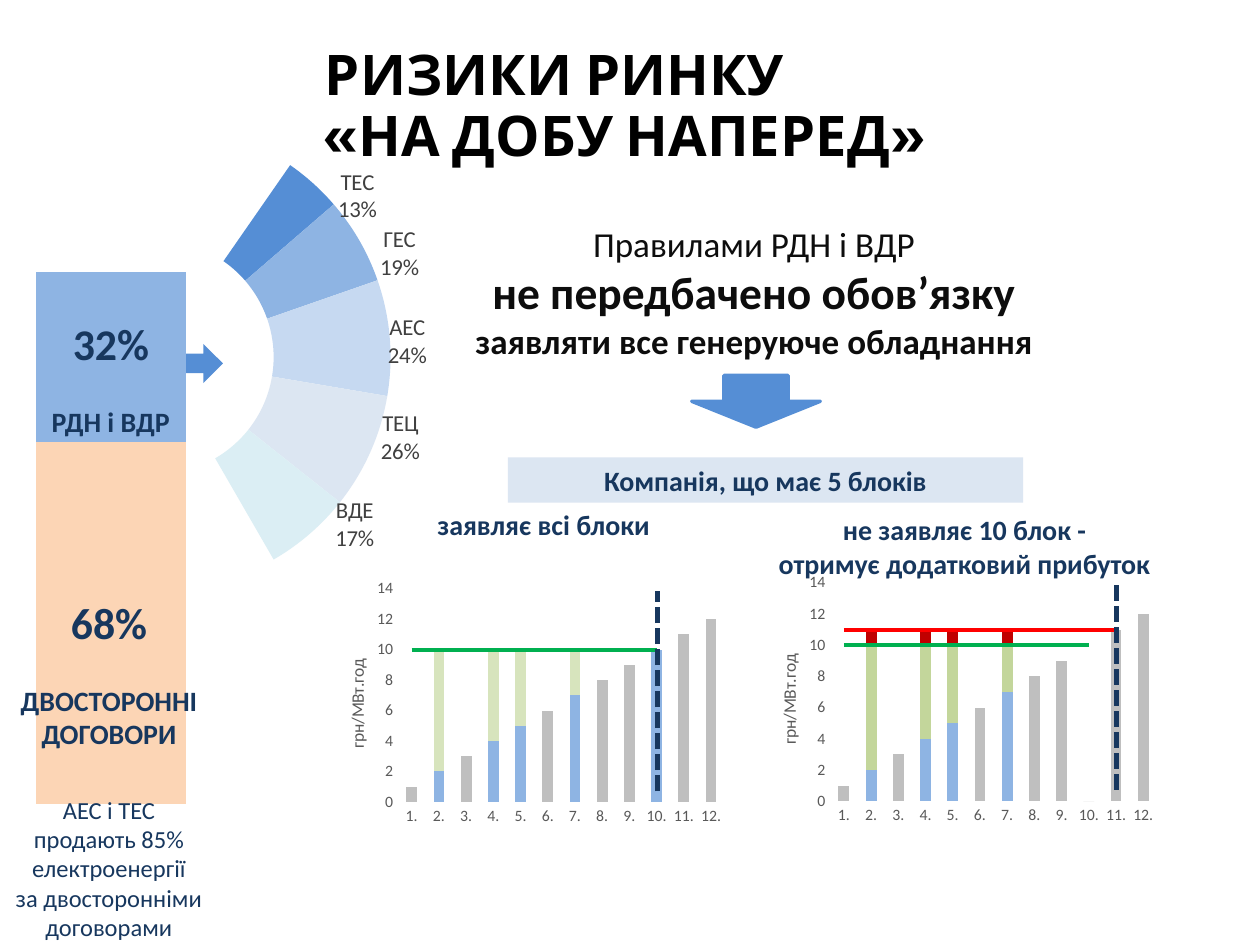
from lxml.etree import SubElement
from pptx import Presentation
from pptx.chart.data import CategoryChartData
from pptx.dml.color import RGBColor
from pptx.enum.chart import XL_CHART_TYPE, XL_MARKER_STYLE, XL_TICK_MARK
from pptx.enum.dml import MSO_LINE
from pptx.enum.shapes import MSO_CONNECTOR, MSO_SHAPE
from pptx.enum.text import MSO_ANCHOR, PP_ALIGN
from pptx.oxml import parse_xml
from pptx.oxml.ns import nsdecls, qn
from pptx.util import Inches, Pt

NAVY, BLUE, SKY, GRAY = "17375E", "558ED5", "8EB4E3", "BFBFBF"
GREEN, RED = "00B050", "FF0000"

# Market share: name, value, colour, label, label shift (fraction of chart)
SOURCES = [
    ("Ринок двосторонніх договорів", 68, None, None, None),
    ("ТЕС", 4, BLUE, "ТЕС\n13%", (0.11, -0.06)),
    ("ГЕС", 6, SKY, "ГЕС\n19%", (0.12, -0.03)),
    ("АЕС", 8, "C6D9F1", "АЕС\n24%", (0.1, 0)),
    ("ТЕЦ", 8, "DCE6F2", "ТЕЦ\n26%", (0.11, 0.02)),
    ("ВДЕ", 6, "DBEEF4", "ВДЕ\n17%", (0.11, 0.07)),
]
MARKET_SPLIT = [("Series 1", [100], "FCD5B5"), ("Series 2", [47], SKY)]

# Bids of the generating units; three empty slots follow the twelve units
SLOTS = [f"{n}." for n in range(1, 13)] + [""] * 3
PROFIT = [None, 8, None, 6, 5, None, 3]
EXTRA = [None, 1, None, 1, 1, None, 1]
BIDS = [
    dict(box=(5.91, 4.5, 4, 2.09), company=[1, 3, 4, 6],
         bars=[([1, 2, 3, 4, 5, 6, 7, 8, 9, 0, 11, 12], GRAY),
               (PROFIT, "C3D69B"), (EXTRA, "C00000")],
         lines=[([10] * 10, GREEN), ([11] * 11, RED)],
         cutoff=(8.86, 6.27, 4.63)),
    dict(box=(2.48, 4.55, 4, 2.04), company=[1, 3, 4, 6, 9],
         bars=[(list(range(1, 13)), GRAY), (PROFIT, "D7E4BD")],
         lines=[([10] * 10, GREEN)],
         cutoff=(5.22, 6.28, 4.69)),
]

prs = Presentation()
prs.slide_width, prs.slide_height = Inches(10), Inches(7.5)
slide = prs.slides.add_slide(prs.slide_layouts[6])


def rgb(value):
    return RGBColor.from_string(value)


def paint(part, color):
    part.format.fill.solid()
    part.format.fill.fore_color.rgb = rgb(color)


def set_font(font, size, color, bold=False, name="Calibri"):
    font.size, font.bold, font.name = Pt(size), bold, name
    font.color.rgb = rgb(color)


def write(frame, lines, color=NAVY, size=16, bold=True, name="Calibri",
          align=PP_ALIGN.CENTER, spacing=None):
    """Each line is a text, or a tuple of text and its own format."""
    frame.word_wrap = True
    frame.vertical_anchor = MSO_ANCHOR.MIDDLE
    for i, line in enumerate(lines):
        text, own = (line, {}) if isinstance(line, str) else line
        p = frame.paragraphs[0] if i == 0 else frame.add_paragraph()
        p.alignment = align
        if spacing:
            p.line_spacing = spacing
        if "before" in own:
            p.space_before = Pt(own["before"])
        run = p.add_run()
        run.text = text
        set_font(run.font, own.get("size", size), color, own.get("bold", bold), name)


def add_text(box, lines, **fmt):
    write(slide.shapes.add_textbox(*map(Inches, box)).text_frame, lines, **fmt)


def add_block(preset, box, color):
    block = slide.shapes.add_shape(preset, *map(Inches, box))
    block.shadow.inherit = False
    block.fill.solid()
    block.fill.fore_color.rgb = rgb(color)
    block.line.fill.background()
    return block


def place(parent, index, edge=False, inner=False, **values):
    """Give a chart part a manual layout in fractions of the chart."""
    for old in parent.findall(qn("c:layout")):
        parent.remove(old)
    layout = parse_xml(f"<c:layout {nsdecls('c')}><c:manualLayout/></c:layout>")
    items = [("layoutTarget", "inner")] if inner else []
    items += [("xMode", "edge"), ("yMode", "edge")] if edge else []
    for tag, value in items + list(values.items()):
        SubElement(layout[0], qn(f"c:{tag}")).set("val", str(value))
    parent.insert(index, layout)


def add_chart(kind, box, categories, series, plot_box):
    data = CategoryChartData()
    data.categories = categories
    for name, values in series:
        data.add_series(name, values)
    chart = slide.shapes.add_chart(kind, *map(Inches, box), data).chart
    chart.has_legend = chart.has_title = False
    set_font(chart.font, 10, "000000")
    chart.plots[0].vary_by_categories = False
    area = chart.element.find(".//" + qn("c:plotArea"))
    place(area, 0, edge=True, inner=True, **dict(zip("xywh", plot_box)))
    return chart, area


def add_bids(box, company, bars, lines, cutoff):
    padded = [v + [None] * (len(SLOTS) - len(v)) for v, _ in bars + lines]
    series = [(f"Series {n}", v) for n, v in enumerate(padded, 1)]
    chart, area = add_chart(XL_CHART_TYPE.COLUMN_STACKED, box, SLOTS, series,
                            (0.17, 0.06, 0.81, 0.83))
    columns = chart.plots[0]
    columns.gap_width, columns.overlap = 150, 100

    # Axes
    for axis in (chart.category_axis, chart.value_axis):
        axis.has_major_gridlines = False
        axis.major_tick_mark = axis.minor_tick_mark = XL_TICK_MARK.NONE
        axis.format.line.fill.background()
        set_font(axis.tick_labels.font, 9, "595959")
    prices = chart.value_axis
    prices.minimum_scale, prices.maximum_scale, prices.major_unit = 0, 14, 2
    title = prices.axis_title
    title.text_frame.text = "грн/МВт.год"
    set_font(title.text_frame.paragraphs[0].runs[0].font, 10, "595959")
    place(title._element, 1, edge=True, x=0.06, y=0.32)

    # Price levels go to a line plot on the same axes
    bar_plot = area.find(qn("c:barChart"))
    line_plot = parse_xml(f'<c:lineChart {nsdecls("c")}><c:grouping val="standard"/>'
                          '<c:varyColors val="0"/></c:lineChart>')
    for ser in bar_plot.findall(qn("c:ser"))[len(bars):]:
        for flag in ser.findall(qn("c:invertIfNegative")):
            ser.remove(flag)
        line_plot.append(ser)
    SubElement(line_plot, qn("c:marker")).set("val", "1")
    for axis_id in bar_plot.findall(qn("c:axId")):
        SubElement(line_plot, qn("c:axId")).set("val", axis_id.get("val"))
    bar_plot.addnext(line_plot)

    for ser, (_, color) in zip(chart.plots[0].series, bars):
        paint(ser, color)
    for i in company:
        paint(chart.plots[0].series[0].points[i], SKY)
    for ser, (_, color) in zip(chart.plots[1].series, lines):
        ser.smooth = False
        ser.marker.style = XL_MARKER_STYLE.NONE
        ser.format.line.color.rgb = rgb(color)
        ser.format.line.width = Pt(2.25)

    # Cut-off unit
    x, bottom, top = map(Inches, cutoff)
    mark = slide.shapes.add_connector(MSO_CONNECTOR.STRAIGHT, x, bottom, x, top)
    mark.line.color.rgb = rgb(NAVY)
    mark.line.width = Pt(3)
    mark.line.dash_style = MSO_LINE.SQUARE_DOT
    SubElement(mark._element.spPr, qn("a:effectLst"))


# Doughnut of sources on the day-ahead market
ring, ring_area = add_chart(
    XL_CHART_TYPE.DOUGHNUT, (-1.76, 0.86, 6.01, 3.99), [s[0] for s in SOURCES],
    [("Series 1", [s[1] for s in SOURCES])], (0.19, 0.03, 0.62, 0.93))
ring_plot = ring_area.find(qn("c:doughnutChart"))
for tag, value in (("firstSliceAng", 150), ("holeSize", 55)):
    for old in ring_plot.findall(qn(f"c:{tag}")):
        ring_plot.remove(old)
    SubElement(ring_plot, qn(f"c:{tag}")).set("val", str(value))
shares = ring.plots[0].series[0]
shares.data_labels.show_value = False
for i, (_, _, color, label, shift) in enumerate(SOURCES):
    point = shares.points[i]
    point.format.line.fill.background()
    if color is None:
        point.format.fill.background()
        continue
    paint(point, color)
    frame = point.data_label.text_frame
    frame.text = label
    for p in frame.paragraphs:
        set_font(p.runs[0].font, 13, "404040")
    place(frame._txBody.getparent().getparent(), 1, x=shift[0], y=shift[1])
for leader in ring_area.iter(qn("c:showLeaderLines")):
    leader.set("val", "0")

# Market split column
add_block(MSO_SHAPE.RIGHT_ARROW, (1.1, 2.73, 0.67, 0.31), BLUE)
split, _ = add_chart(XL_CHART_TYPE.COLUMN_STACKED, (0.26, 1.78, 1.24, 4.7), ["1"],
                     [s[:2] for s in MARKET_SPLIT], (0.02, 0.08, 0.96, 0.9))
split.plots[0].gap_width, split.plots[0].overlap = 0, 100
split.value_axis.minimum_scale, split.value_axis.maximum_scale = 0, 147
split.value_axis.has_major_gridlines = False
split.value_axis.visible = split.category_axis.visible = False
for ser, (_, _, color) in zip(split.plots[0].series, MARKET_SPLIT):
    paint(ser, color)
add_text((-0.12, 4.88, 1.97, 0.92),
         [("68%", dict(size=25)), ("ДВОСТОРОННІ", dict(before=20)), "ДОГОВОРИ"])
add_text((0.31, 2.57, 1.14, 0.85),
         [("32%", dict(size=25)), ("РДН і ВДР", dict(before=20))])
add_text((-0.12, 6.43, 1.97, 0.92),
         ["АЕС і ТЕС", "продають 85%", "електроенергії", "за двосторонніми",
          "договорами"], size=14, bold=False)

# Title
add_text((2.48, 0.23, 7.89, 1.25), ["РИЗИКИ РИНКУ", "«НА ДОБУ НАПЕРЕД»"],
         size=32, color="000000", name="Cabin", align=PP_ALIGN.LEFT, spacing=0.9)

# Bid charts and their headings
for bid in BIDS:
    add_bids(**bid)
company_bar = add_block(MSO_SHAPE.RECTANGLE, (4.03, 3.63, 4.09, 0.36), "DCE6F2")
write(company_bar.text_frame, ["Компанія, що має 5 блоків"])
add_text((2.6, 3.94, 3.43, 0.45), ["заявляє всі блоки"])
add_text((5.94, 4.11, 3.43, 0.45),
         ["не заявляє 10 блок -", "отримує додатковий прибуток"])

# Rule of the market
add_text((3.19, 1.69, 5.59, 1.25),
         [("Правилами РДН і ВДР", dict(bold=False)),
          ("не передбачено обов’язку", dict(size=26)),
          "заявляти все генеруюче обладнання"], size=20, color="0D0D0D")
down = add_block(MSO_SHAPE.DOWN_ARROW, (5.49, 2.98, 1.02, 0.41), BLUE)
down.line.color.rgb = rgb(BLUE)
down.line.width = Pt(2)

prs.save("out.pptx")
